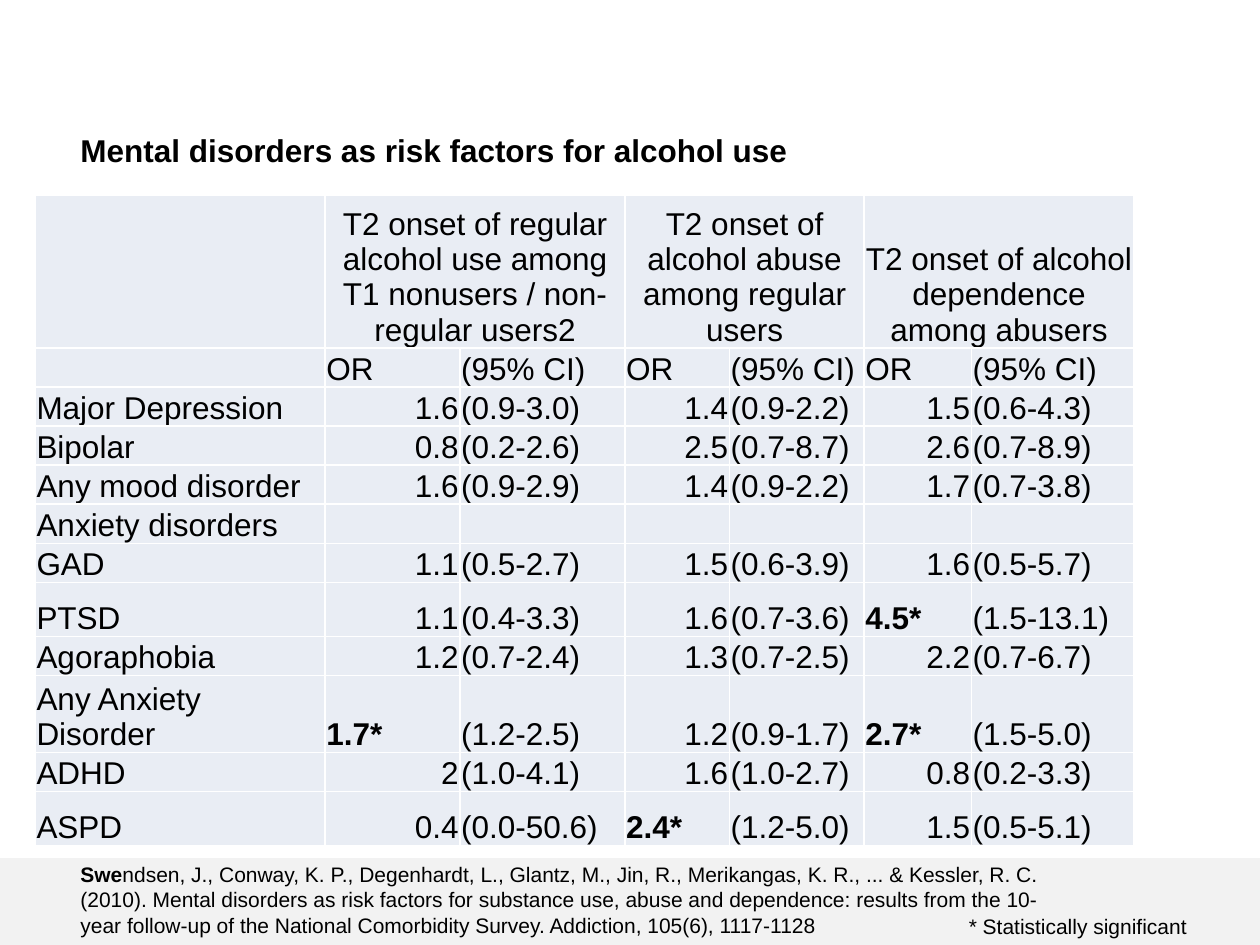
from lxml.etree import SubElement
from pptx import Presentation
from pptx.dml.color import RGBColor
from pptx.enum.shapes import MSO_SHAPE as Shape
from pptx.enum.text import MSO_ANCHOR as Anchor, MSO_AUTO_SIZE as AutoSize, PP_ALIGN as Align
from pptx.oxml.ns import qn
from pptx.util import Inches, Pt

WIDTH, HEIGHT = Inches(10), Inches(7.5)
BLACK, WHITE, BAND, CELL = "000000", "FFFFFF", "F2F2F2", "E9EDF4"
COLUMNS = [23, 10.7, 13.1, 8.3, 10.7, 8.5, 12.9]
NORMAL_ROW, TALL_ROW, HEADER_ROW = 4, 5.73, 15.6
TALL_LABELS = {"PTSD", "Any Anxiety Disorder", "ASPD"}
HEADINGS = [
    "T2 onset of regular alcohol use among T1 nonusers / non-regular users2",
    "T2 onset of alcohol abuse among regular users",
    "T2 onset of alcohol dependence among abusers",
]
ROWS = [
    ["", "OR", "(95% CI)", "OR", "(95% CI)", "OR", "(95% CI)"],
    ["Major Depression", "1.6", "(0.9-3.0)", "1.4", "(0.9-2.2)", "1.5", "(0.6-4.3)"],
    ["Bipolar", "0.8", "(0.2-2.6)", "2.5", "(0.7-8.7)", "2.6", "(0.7-8.9)"],
    ["Any mood disorder", "1.6", "(0.9-2.9)", "1.4", "(0.9-2.2)", "1.7", "(0.7-3.8)"],
    ["Anxiety disorders", "", "", "", "", "", ""],
    ["GAD", "1.1", "(0.5-2.7)", "1.5", "(0.6-3.9)", "1.6", "(0.5-5.7)"],
    ["PTSD", "1.1", "(0.4-3.3)", "1.6", "(0.7-3.6)", "4.5*", "(1.5-13.1)"],
    ["Agoraphobia", "1.2", "(0.7-2.4)", "1.3", "(0.7-2.5)", "2.2", "(0.7-6.7)"],
    ["Any Anxiety Disorder", "1.7*", "(1.2-2.5)", "1.2", "(0.9-1.7)", "2.7*", "(1.5-5.0)"],
    ["ADHD", "2", "(1.0-4.1)", "1.6", "(1.0-2.7)", "0.8", "(0.2-3.3)"],
    ["ASPD", "0.4", "(0.0-50.6)", "2.4*", "(1.2-5.0)", "1.5", "(0.5-5.1)"],
]
CITATION = (
    "ndsen, J., Conway, K. P., Degenhardt, L., Glantz, M., Jin, R., Merikangas, K. R., ... "
    "& Kessler, R. C. (2010). Mental disorders as risk factors for substance use, abuse and "
    "dependence: results from the 10‐year follow‐up of the National Comorbidity Survey. "
    "Addiction, 105(6), 1117-1128"
)


def color(value):
    return RGBColor.from_string(value)


def across(percent):
    return int(WIDTH * percent / 100)


def down(percent):
    return int(HEIGHT * percent / 100)


def place(left, top, width, height):
    return across(left), down(top), across(width), down(height)


def style_run(run, size, bold=False):
    run.font.name = "Arial"
    run.font.size = Pt(size)
    run.font.bold = bold
    run.font.color.rgb = color(BLACK)


def add_band(slide, box):
    shape = slide.shapes.add_shape(Shape.RECTANGLE, *place(*box))
    shape.shadow.inherit = False
    shape.fill.solid()
    shape.fill.fore_color.rgb = color(BAND)
    shape.line.fill.background()


def add_text(slide, box, size, *pieces):
    text_frame = slide.shapes.add_textbox(*place(*box)).text_frame
    text_frame.word_wrap = True
    text_frame.auto_size = AutoSize.SHAPE_TO_FIT_TEXT
    for text, bold in pieces:
        run = text_frame.paragraphs[0].add_run()
        run.text = text
        style_run(run, size, bold)


def add_borders(cell):
    properties = cell._tc.get_or_add_tcPr()
    for side in ("a:lnL", "a:lnR", "a:lnT", "a:lnB"):
        line = SubElement(properties, qn(side), w=str(Pt(1)))
        SubElement(SubElement(line, qn("a:solidFill")), qn("a:srgbClr"), val=WHITE)


def style_cell(cell):
    add_borders(cell)
    cell.fill.solid()
    cell.fill.fore_color.rgb = color(CELL)
    cell.vertical_anchor = Anchor.BOTTOM
    cell.margin_left = cell.margin_right = cell.margin_top = Inches(0.01)
    cell.margin_bottom = 0


def write_cell(cell, text, align):
    if not text:
        return
    cell.text_frame.text = text
    paragraph = cell.text_frame.paragraphs[0]
    paragraph.alignment = align
    style_run(paragraph.runs[0], 18, text.endswith("*"))


def is_number(text):
    return text.replace(".", "").isdigit()


def add_risk_table(slide, left, top):
    heights = [HEADER_ROW] + [TALL_ROW if row[0] in TALL_LABELS else NORMAL_ROW for row in ROWS]
    box = place(left, top, sum(COLUMNS), sum(heights))
    table = slide.shapes.add_table(len(heights), len(COLUMNS), *box).table
    table.first_row = table.horz_banding = False
    for column, width in zip(table.columns, COLUMNS):
        column.width = across(width)
    for row, height in zip(table.rows, heights):
        row.height = down(height)
    for cell in table.iter_cells():
        style_cell(cell)
    for index, heading in enumerate(HEADINGS):
        first = 1 + 2 * index
        table.cell(0, first).merge(table.cell(0, first + 1))
        write_cell(table.cell(0, first), heading, Align.CENTER)
    for row_index, row in enumerate(ROWS, 1):
        for column_index, text in enumerate(row):
            align = Align.RIGHT if is_number(text) else Align.LEFT
            write_cell(table.cell(row_index, column_index), text, align)


def main():
    presentation = Presentation()
    presentation.slide_width, presentation.slide_height = WIDTH, HEIGHT
    slide = presentation.slides.add_slide(presentation.slide_layouts[6])
    add_band(slide, (0, 90.8, 100, 9.2))
    add_text(slide, (5.4, 13.2, 81.1, 5.33), 18,
             ("Mental disorders as risk factors for alcohol use", True))
    add_text(slide, (5.4, 90.53, 81.1, 9.47), 12, ("Swe", True), (CITATION, False))
    add_risk_table(slide, 2.8, 20.67)
    add_text(slide, (75.9, 96, 21.1, 4), 12, ("* Statistically significant", False))
    presentation.save("out.pptx")


if __name__ == "__main__":
    main()
